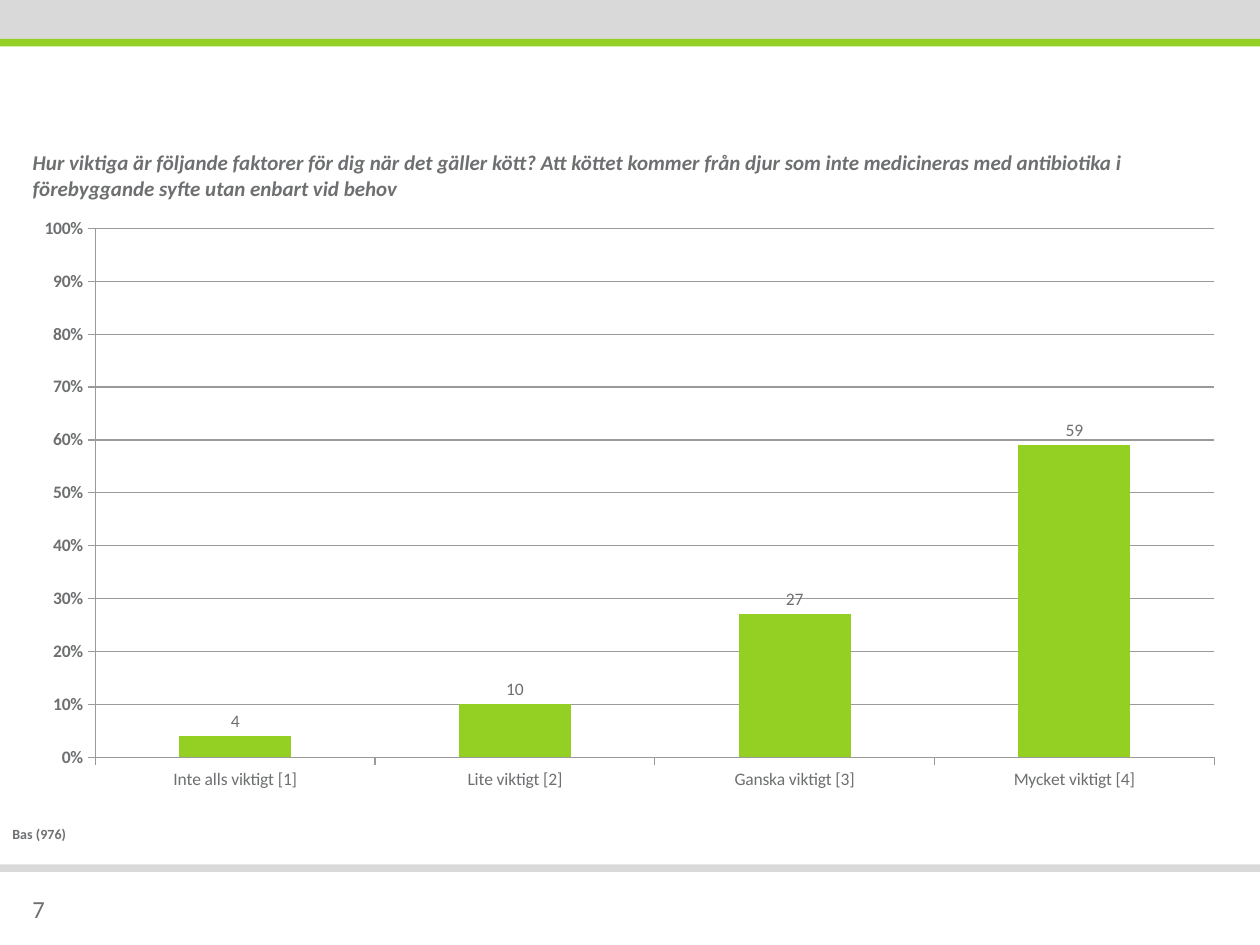
import pptx
import pptx.chart.data
import pptx.dml.color
import pptx.enum.chart
import pptx.enum.shapes
import pptx.enum.text
import pptx.util
from lxml import etree
from pptx.util import Inches

COLORS = {"grey": "D9D9D9", "green": "93D023", "text": "6D6F71", "line": "9A9A9A"}
FONT = "Calibri"


def rgb(name):
    return pptx.dml.color.RGBColor.from_string(COLORS[name])


def style(font, size, bold=False, italic=False):
    font.name = FONT
    font.size = pptx.util.Pt(size)
    font.bold = bold
    font.italic = italic
    font.color.rgb = rgb("text")


deck = pptx.Presentation()
deck.slide_width, deck.slide_height = Inches(10), Inches(7.5)
page = deck.slides.add_slide(deck.slide_layouts[1])
title = page.shapes.title.element
title.getparent().remove(title)

# Header and footer bands
for top, height, color in [(0, 0.31, "grey"), (6.86, 0.06, "grey"), (0.31, 0.06, "green")]:
    band = page.shapes.add_shape(
        pptx.enum.shapes.MSO_SHAPE.RECTANGLE, 0, Inches(top), Inches(10), Inches(height))
    band.shadow.inherit = False
    band.fill.solid()
    band.fill.fore_color.rgb = rgb(color)
    band.line.fill.background()

# Chart of answers
data = pptx.chart.data.CategoryChartData()
data.categories = ["Inte alls viktigt [1]", "Lite viktigt [2]",
                   "Ganska viktigt [3]", "Mycket viktigt [4]"]
data.add_series("Series 1", [4, 10, 27, 59])
chart = page.shapes.add_chart(
    pptx.enum.chart.XL_CHART_TYPE.COLUMN_CLUSTERED,
    Inches(0.16), Inches(1.64), Inches(9.67), Inches(4.72), data).chart
chart.has_legend = False
chart.has_title = False
style(chart.font, 18)

values = chart.value_axis
values.minimum_scale, values.maximum_scale, values.major_unit = 0, 100, 10
values.tick_labels.number_format = '0"%"'
values.tick_labels.number_format_is_linked = False
values.has_major_gridlines = True
values.major_gridlines.format.line.color.rgb = rgb("line")
for axis, bold in [(chart.category_axis, False), (values, True)]:
    axis.major_tick_mark = pptx.enum.chart.XL_TICK_MARK.OUTSIDE
    axis.format.line.color.rgb = rgb("line")
    style(axis.tick_labels.font, 10, bold)

plot = chart.plots[0]
plot.gap_width = 150
plot.vary_by_categories = False
bars = plot.series[0]
bars.format.fill.solid()
bars.format.fill.fore_color.rgb = rgb("green")
labels = bars.data_labels
labels.show_value = True
labels.position = pptx.enum.chart.XL_LABEL_POSITION.OUTSIDE_END
style(labels.font, 10)

# Question, base size and page number
question = page.placeholders[1]
question.left, question.top = Inches(0.16), Inches(1.14)
question.width, question.height = Inches(9.69), Inches(0.57)
base = page.shapes.add_textbox(0, Inches(6.5), Inches(10), Inches(0.24))
number = page.shapes.add_textbox(Inches(0.16), Inches(6.95), Inches(0.77), Inches(0.52))
number.text_frame.vertical_anchor = pptx.enum.text.MSO_ANCHOR.MIDDLE

for box, text, size, bold, italic in [
    (question, "Hur viktiga är följande faktorer för dig när det gäller kött? "
               "Att köttet kommer från djur som inte medicineras med antibiotika i "
               "förebyggande syfte utan enbart vid behov", 12, True, True),
    (base, "Bas (976)", 8, True, False),
    (number, "7", 14, False, False),
]:
    box.text_frame.word_wrap = True
    para = box.text_frame.paragraphs[0]
    para.space_before = pptx.util.Pt(0)
    span = para.add_run()
    span.text = text
    style(span.font, size, bold, italic)

# The question is a plain line without bullet or indent
properties = question.text_frame.paragraphs[0]._p.get_or_add_pPr()
properties.set("marL", "0")
properties.set("indent", "0")
etree.SubElement(properties, pptx.oxml.ns.qn("a:buNone"))

deck.save("out.pptx")
